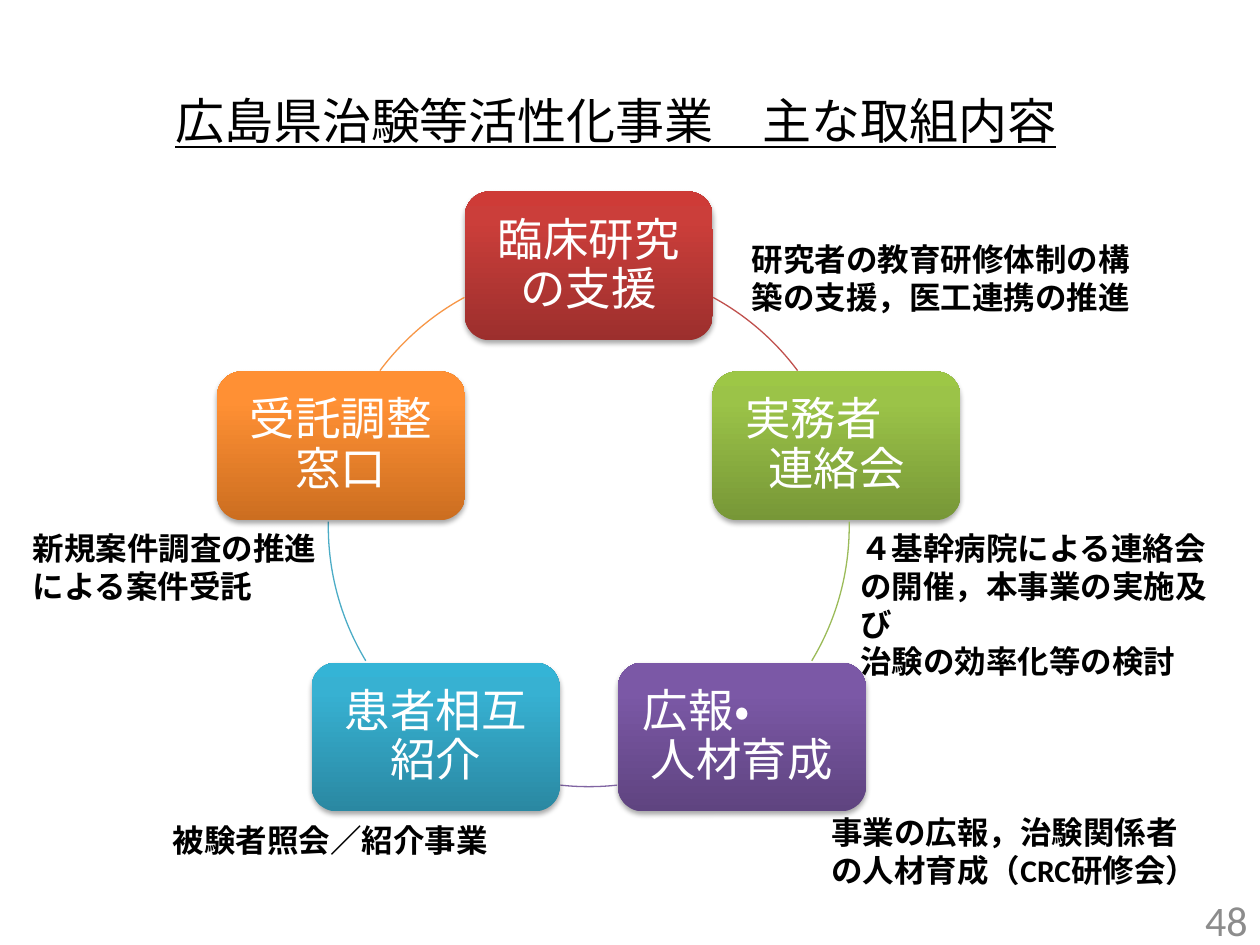
from math import cos, radians, sin

from lxml import etree
from pptx import Presentation
from pptx.dml.color import RGBColor
from pptx.enum.lang import MSO_LANGUAGE_ID
from pptx.enum.shapes import MSO_SHAPE
from pptx.enum.text import MSO_ANCHOR, PP_ALIGN
from pptx.util import Cm, Pt

ROUNDED, ARC = MSO_SHAPE.ROUNDED_RECTANGLE, MSO_SHAPE.ARC
LEFT, CENTER, RIGHT = PP_ALIGN.LEFT, PP_ALIGN.CENTER, PP_ALIGN.RIGHT
TOP, MIDDLE = MSO_ANCHOR.TOP, MSO_ANCHOR.MIDDLE
JAPANESE = MSO_LANGUAGE_ID.JAPANESE
DRAWING_NS = "http://schemas.openxmlformats.org/drawingml/2006/main"

NODE_W, NODE_H = 5.0, 3.0

# Clockwise from the top: text, gradient from bottom to top,
# colour and start/end angles of the arc that follows
INITIATIVES = [
    ("臨床研究\nの支援", ("9C2F2D", "CB3E3A", "CE3B37"), "C0504D", (298.5, 323.3)),
    ("実務者　連絡会", ("779737", "9BC348", "9DC746"), "9BBB59", (359, 31.1)),
    ("広報・　　人材育成", ("5F4480", "7B58A6", "7C57A8"), "8064A2", (83.75, 96.25)),
    ("患者相互紹介", ("2A88A2", "37B1D2", "34B4D6"), "4BACC6", (148.9, 181)),
    ("受託調整窓口", ("CC6E20", "FF9034", "FF9136"), "F79646", (216.7, 241.5)),
]

# Explanations beside the initiatives: text, box in cm
EXPLANATIONS = [
    ("新規案件調査の推進による案件受託", (0.41, 10.54, 6.35, 1.83)),
    ("被験者照会／紹介事業", (3.23, 16.43, 7.04, 1.02)),
    ("研究者の教育研修体制の構築の支援，医工連携の推進", (14.91, 4.72, 8.2, 1.8)),
    ("事業の広報，治験関係者の人材育成（CRC研修会）", (16.51, 16.26, 8, 1.8)),
    ("４基幹病院による連絡会の開催，本事業の実施及び\n治験の効率化等の検討",
     (17.09, 10.54, 8, 2.57)),
]


def rgb(hex_color):
    return RGBColor.from_string(hex_color)


def write_text(shape, text, size=18, color="000000", bold=False, underline=False,
               align=LEFT, anchor=TOP, line_spacing=None, inset=None):
    frame = shape.text_frame
    frame.word_wrap = True
    frame.vertical_anchor = anchor
    if inset is not None:
        frame.margin_left = frame.margin_right = Cm(inset)
        frame.margin_top = frame.margin_bottom = Cm(inset)
    for i, line in enumerate(text.split("\n")):
        paragraph = frame.add_paragraph() if i else frame.paragraphs[0]
        paragraph.alignment = align
        paragraph.line_spacing = line_spacing
        run = paragraph.add_run()
        run.text = line
        font = run.font
        font.name, font.size, font.bold = "Calibri", Pt(size), bold
        font.underline = underline
        font.color.rgb = rgb(color)
        font.language_id = JAPANESE


def add_text(slide, box, text, **text_format):
    textbox = slide.shapes.add_textbox(*map(Cm, box))
    write_text(textbox, text, **text_format)
    return textbox


def style_node(node, gradient):
    """Vertical three-stop gradient, no outline, soft shadow below."""
    stops = "".join(
        f'<a:gs pos="{pos}"><a:srgbClr val="{color}"/></a:gs>'
        for pos, color in zip((0, 80000, 100000), gradient))
    fill = (f'<a:gradFill xmlns:a="{DRAWING_NS}" rotWithShape="1"><a:gsLst>{stops}'
            '</a:gsLst><a:lin ang="16200000" scaled="0"/></a:gradFill>')
    effects = (f'<a:effectLst xmlns:a="{DRAWING_NS}"><a:outerShdw blurRad="{Pt(3.1)}" '
               f'dist="{Pt(1.8)}" dir="5400000" rotWithShape="0"><a:srgbClr val="000000">'
               '<a:alpha val="35000"/></a:srgbClr></a:outerShdw></a:effectLst>')
    node.line.fill.background()
    properties = node.element.spPr
    properties.find(f"{{{DRAWING_NS}}}prstGeom").addnext(etree.fromstring(fill))
    properties.append(etree.fromstring(effects))


def add_cycle(slide, box):
    """Initiatives evenly spaced on the circle that fills the box."""
    left, top, diameter = box
    radius = diameter / 2
    for i, (text, gradient, arc_color, angles) in enumerate(INITIATIVES):
        # Initiative
        direction = radians(360 / len(INITIATIVES) * i - 90)
        x = left + radius + radius * cos(direction) - NODE_W / 2
        y = top + radius + radius * sin(direction) - NODE_H / 2
        node = slide.shapes.add_shape(ROUNDED, Cm(x), Cm(y), Cm(NODE_W), Cm(NODE_H))
        style_node(node, gradient)
        write_text(node, text, size=26, color="FFFFFF", align=CENTER,
                   anchor=MIDDLE, line_spacing=0.9, inset=0.28)

        # Arc to the next initiative; angles are stored in 1/60000 degree
        arc = slide.shapes.add_shape(ARC, Cm(left), Cm(top), Cm(diameter), Cm(diameter))
        for k, angle in enumerate(angles):
            arc.adjustments[k] = angle * 0.6
        arc.shadow.inherit = False
        arc.fill.background()
        arc.line.color.rgb = rgb(arc_color)
        arc.line.width = Pt(0.75)


def add_title(slide, box):
    title = add_text(slide, box, "広島県治験等活性化事業　主な取組内容", size=28,
                     underline=True, align=CENTER, anchor=MIDDLE)
    # The trailing wide space carries no underline
    trailing = title.text_frame.paragraphs[0].add_run()
    trailing.text = "　"
    trailing.font.size = Pt(28)
    trailing.font.name = "Calibri"


def add_explanations(slide):
    for text, box in EXPLANATIONS:
        add_text(slide, box, text, bold=True)


def main():
    prs = Presentation()
    prs.slide_width, prs.slide_height = Cm(25.4), Cm(19.05)
    slide = prs.slides.add_slide(prs.slide_layouts[6])
    add_text(slide, (19.48, 18.03, 5.92, 1.02), "48", size=24, color="8C8C8C",
             align=RIGHT, anchor=MIDDLE)
    add_cycle(slide, (6.62, 5.36, 10.5))
    add_title(slide, (0.51, 1.32, 24.79, 2.21))
    add_explanations(slide)
    prs.save("out.pptx")


if __name__ == "__main__":
    main()
